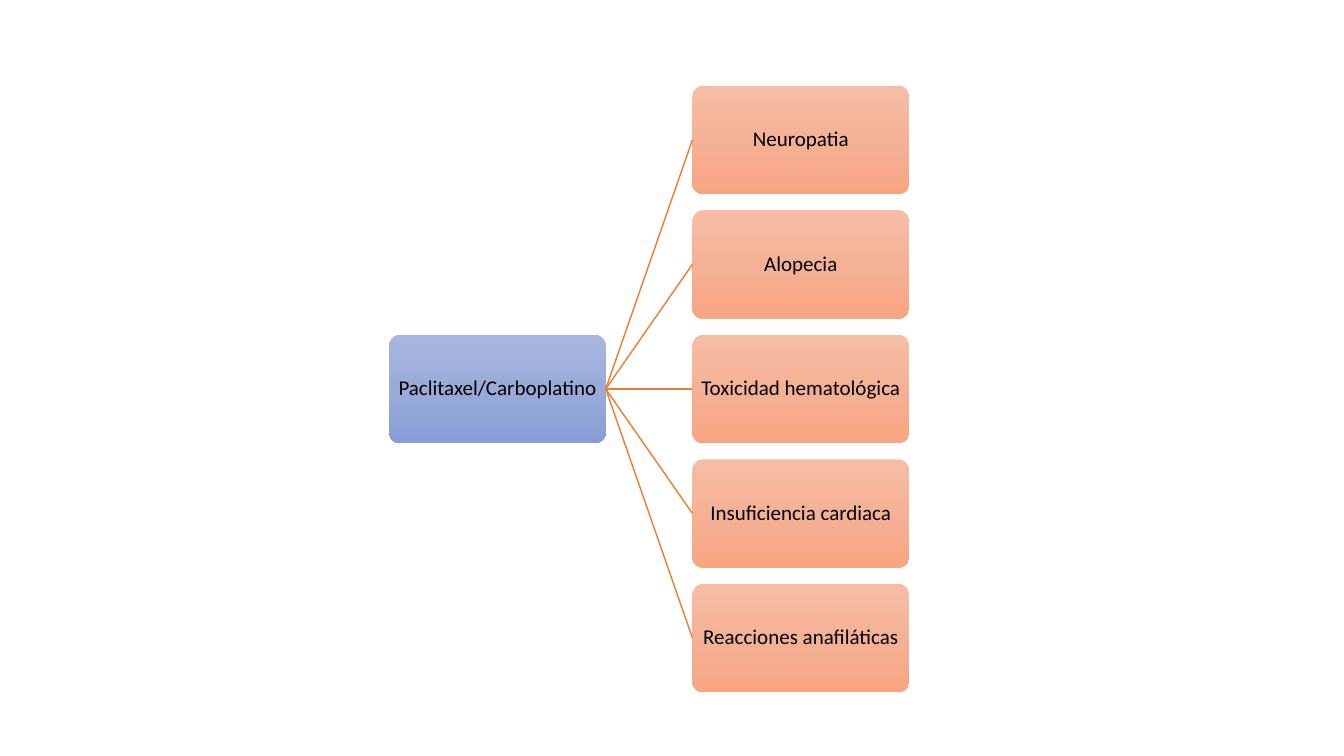
from copy import deepcopy
from dataclasses import dataclass

from pptx import Presentation
from pptx.dml.color import RGBColor
from pptx.enum.shapes import MSO_CONNECTOR, MSO_SHAPE
from pptx.enum.text import MSO_ANCHOR, PP_ALIGN
from pptx.oxml.ns import qn
from pptx.oxml.xmlchemy import OxmlElement
from pptx.util import Pt


@dataclass(frozen=True)
class Theme:
    root: tuple = ("A8B7DF", "9AABD9", "889ED7")
    leaf: tuple = ("F7BDA5", "F5B196", "F8A582")
    link: str = "ED7D31"
    ink: str = "000000"
    font: str = "Calibri"
    size: float = 15


THEME = Theme()
DRUG = "Paclitaxel/Carboplatino"
EFFECTS = ["Neuropatia", "Alopecia", "Toxicidad hematológica",
           "Insuficiencia cardiaca", "Reacciones anafiláticas"]
NODE_W, NODE_H = 154.8, 77.4


def shade(shape, colors):
    """Fill from top to bottom with three evenly spaced colours."""
    fill = shape.fill
    fill.gradient()
    fill.gradient_angle = 270
    first = shape._element.spPr.find(".//" + qn("a:gs"))
    first.addnext(deepcopy(first))
    for i, (stop, color) in enumerate(zip(fill.gradient_stops, colors)):
        stop.position = i / 2
        stop.color.rgb = RGBColor.from_string(color)


def add_node(slide, text, left, top, colors):
    node = slide.shapes.add_shape(MSO_SHAPE.ROUNDED_RECTANGLE, Pt(left), Pt(top),
                                  Pt(NODE_W), Pt(NODE_H))
    node.adjustments[0] = 0.1
    node.shadow.inherit = False
    node.line.fill.background()
    shade(node, colors)
    frame = node.text_frame
    frame.text = text
    frame.word_wrap = True
    frame.vertical_anchor = MSO_ANCHOR.MIDDLE
    frame.margin_left = frame.margin_right = Pt(3)
    frame.margin_top = frame.margin_bottom = Pt(3)
    para = frame.paragraphs[0]
    para.alignment = PP_ALIGN.CENTER
    para.line_spacing = 0.9
    font = para.runs[0].font
    font.name, font.size = THEME.font, Pt(THEME.size)
    font.color.rgb = RGBColor.from_string(THEME.ink)
    return node


def add_link(slide, root, leaf):
    """Join the right side of the root to the left side of the leaf."""
    link = slide.shapes.add_connector(MSO_CONNECTOR.STRAIGHT, 0, 0, 0, 0)
    link.begin_connect(root, 3)
    link.end_connect(leaf, 1)
    link.line.width = Pt(1)
    link.line.color.rgb = RGBColor.from_string(THEME.link)
    link._element.spPr.append(OxmlElement("a:effectLst"))


def add_tree(slide, left, top, width, height):
    """Root at the left, centred on a column of leaves at the right."""
    step = (height - NODE_H) / (len(EFFECTS) - 1)
    root = add_node(slide, DRUG, left, top + (height - NODE_H) / 2, THEME.root)
    for i, text in enumerate(EFFECTS):
        leaf = add_node(slide, text, left + width - NODE_W, top + i * step, THEME.leaf)
        add_link(slide, root, leaf)


def main():
    deck = Presentation()
    deck.slide_width, deck.slide_height = Pt(960), Pt(540)
    slide = deck.slides.add_slide(deck.slide_layouts[6])
    add_tree(slide, left=277.9, top=61.2, width=371.5, height=433.2)
    deck.save("out.pptx")


if __name__ == "__main__":
    main()
